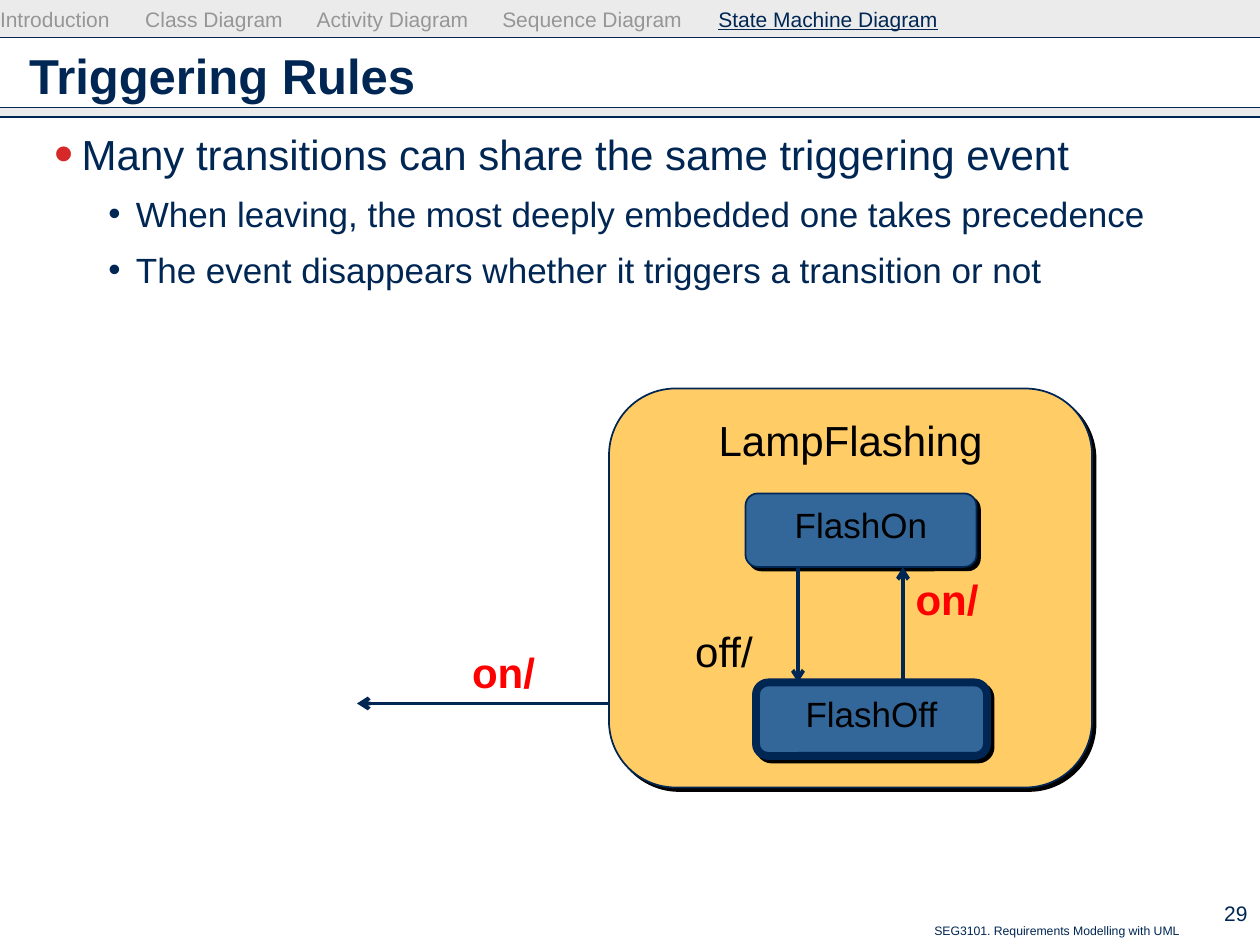
"""Build the Triggering Rules slide with its lamp state machine."""
from dataclasses import dataclass

from lxml.etree import SubElement
from pptx import Presentation
from pptx.dml.color import RGBColor
from pptx.enum.shapes import MSO_CONNECTOR, MSO_SHAPE
from pptx.enum.text import MSO_ANCHOR, MSO_AUTO_SIZE, PP_ALIGN
from pptx.oxml import parse_xml
from pptx.oxml.ns import nsdecls, qn
from pptx.util import Pt


@dataclass(frozen=True)
class Theme:
    font: str = "Arial"
    navy: str = "002654"
    grey: str = "969696"
    band: str = "CDCDCD"
    amber: str = "FFCC66"
    blue: str = "336699"
    black: str = "000000"
    red: str = "FF0000"
    bullet: str = "D62828"
    title: int = 28
    large: int = 24
    medium: int = 20
    small: int = 12
    tiny: int = 7


theme = Theme()


def write(paragraph, wording, size, color, bold=False, underline=False):
    run = paragraph.add_run()
    run.text = wording
    run.font.name = theme.font
    run.font.size = Pt(size)
    run.font.bold = bold
    run.font.underline = underline
    run.font.color.rgb = RGBColor.from_string(color)


def rule(x1, y1, x2, y2, weight, arrow=False):
    line = slide.shapes.add_connector(MSO_CONNECTOR.STRAIGHT, Pt(x1), Pt(y1), Pt(x2), Pt(y2))
    line.line.color.rgb = RGBColor.from_string(theme.navy)
    line.line.width = Pt(weight)
    if arrow:
        SubElement(line.line._get_or_add_ln(), qn("a:tailEnd"), type="arrow")
    SubElement(line._element.spPr, qn("a:effectLst"))


deck = Presentation()
deck.slide_width, deck.slide_height = Pt(720), Pt(540)
slide = deck.slides.add_slide(deck.slide_layouts[5])

for top, height in [(0, 21.6), (61.4, 5.3)]:
    band = slide.shapes.add_shape(MSO_SHAPE.RECTANGLE, 0, Pt(top), Pt(720), Pt(height))
    band.shadow.inherit = False
    band.fill.solid()
    band.fill.fore_color.rgb = RGBColor.from_string(theme.band)
    SubElement(band._element.spPr.find(".//" + qn("a:srgbClr")), qn("a:alpha"), val="40000")
    band.line.fill.background()
for y in (61.4, 21.6, 66.8):
    rule(0, y, 720, y, 0.75)

title = slide.shapes.title
title.left, title.top, title.width, title.height = Pt(9.4), Pt(18.9), Pt(701), Pt(47.6)
title.text_frame.auto_size = MSO_AUTO_SIZE.NONE
title.text_frame.vertical_anchor = MSO_ANCHOR.MIDDLE
heading = title.text_frame.paragraphs[0]
heading.alignment = PP_ALIGN.LEFT
write(heading, "Triggering Rules", theme.title, theme.navy, bold=True)

rules = slide.shapes.add_textbox(Pt(9.4), Pt(72.7), Pt(701), Pt(439)).text_frame
rules.word_wrap = True
for index, (level, wording) in enumerate([
    (0, "Many transitions can share the same triggering event"),
    (1, "When leaving, the most deeply embedded one takes precedence"),
    (1, "The event disappears whether it triggers a transition or not"),
]):
    point = rules.add_paragraph() if index else rules.paragraphs[0]
    point.level = level
    point.line_spacing = Pt(26)
    point.space_before = Pt(6 if index else 0)
    properties = point._p.get_or_add_pPr()
    properties.set("marL", str(Pt((30.2, 61.2)[level])))
    properties.set("indent", str(Pt(-15.8)))
    if level == 0:
        SubElement(SubElement(properties, qn("a:buClr")), qn("a:srgbClr"), val=theme.bullet)
        SubElement(properties, qn("a:buSzPct"), val="130000")
    SubElement(properties, qn("a:buFont"), typeface=theme.font)
    SubElement(properties, qn("a:buChar"), char="•")
    write(point, wording, (theme.large, theme.medium)[level], theme.navy)

for name, left, top, width, height, fill, weight, size in [
    ("LampFlashing", 348, 222, 276, 228, theme.amber, 1, theme.large),
    ("FlashOff", 432, 390, 132, 42, theme.blue, 4.5, theme.medium),
    ("FlashOn", 426, 282, 132, 42, theme.blue, 1, theme.medium),
]:
    state = slide.shapes.add_shape(MSO_SHAPE.ROUNDED_RECTANGLE, Pt(left), Pt(top), Pt(width), Pt(height))
    state.fill.solid()
    state.fill.fore_color.rgb = RGBColor.from_string(fill)
    state.line.color.rgb = RGBColor.from_string(theme.navy)
    state.line.width = Pt(weight)
    state.shadow.inherit = False
    state._element.spPr.find(qn("a:effectLst")).append(parse_xml(
        f'<a:outerShdw {nsdecls("a")} dist="{Pt(2.8)}" dir="2700000" algn="ctr" rotWithShape="0">'
        f'<a:srgbClr val="{theme.black}"/></a:outerShdw>'))
    state.text_frame.word_wrap = False
    state.text_frame.vertical_anchor = MSO_ANCHOR.TOP
    state.text_frame.paragraphs[0].alignment = PP_ALIGN.CENTER
    write(state.text_frame.paragraphs[0], name, size, theme.black)

for x1, y1, x2, y2 in [(456, 324, 456, 390), (516, 390, 516, 324), (348, 402, 204, 402)]:
    rule(x1, y1, x2, y2, 2.25, arrow=True)

for event, left, top, width, color, bold in [
    ("off/", 390, 354, 47.5, theme.black, False),
    ("on/", 516, 324, 50.4, theme.red, True),
    ("on/", 262.6, 366, 50.4, theme.red, True),
]:
    trigger = slide.shapes.add_textbox(Pt(left), Pt(top), Pt(width), Pt(36)).text_frame
    trigger.word_wrap = False
    trigger.vertical_anchor = MSO_ANCHOR.MIDDLE
    trigger.paragraphs[0].alignment = PP_ALIGN.CENTER
    write(trigger.paragraphs[0], event, theme.large, color, bold)

for wording, left, top, width, height, size, anchor in [
    ("SEG3101. Requirements Modelling with UML", 234, 524.2, 447, 15.8, theme.tiny, MSO_ANCHOR.TOP),
    ("29", 669.6, 509.8, 50.4, 24.5, theme.small, MSO_ANCHOR.MIDDLE),
]:
    footer = slide.shapes.add_textbox(Pt(left), Pt(top), Pt(width), Pt(height)).text_frame
    footer.word_wrap = True
    footer.vertical_anchor = anchor
    footer.paragraphs[0].alignment = PP_ALIGN.RIGHT
    write(footer.paragraphs[0], wording, size, theme.navy)

navigation = slide.shapes.add_textbox(0, Pt(3.6), Pt(569), Pt(18)).text_frame
navigation.word_wrap = True
navigation.margin_left = navigation.margin_top = 0
trail = navigation.paragraphs[0]
stops = SubElement(trail._p.get_or_add_pPr(), qn("a:tabLst"))
for position in (83, 181, 287, 410.5):
    SubElement(stops, qn("a:tab"), pos=str(Pt(position)), algn="l")
for section in ("Introduction", "Class Diagram", "Activity Diagram", "Sequence Diagram"):
    write(trail, section + "\t", theme.small, theme.grey)
write(trail, "State Machine Diagram", theme.small, theme.navy, underline=True)

deck.save("out.pptx")
